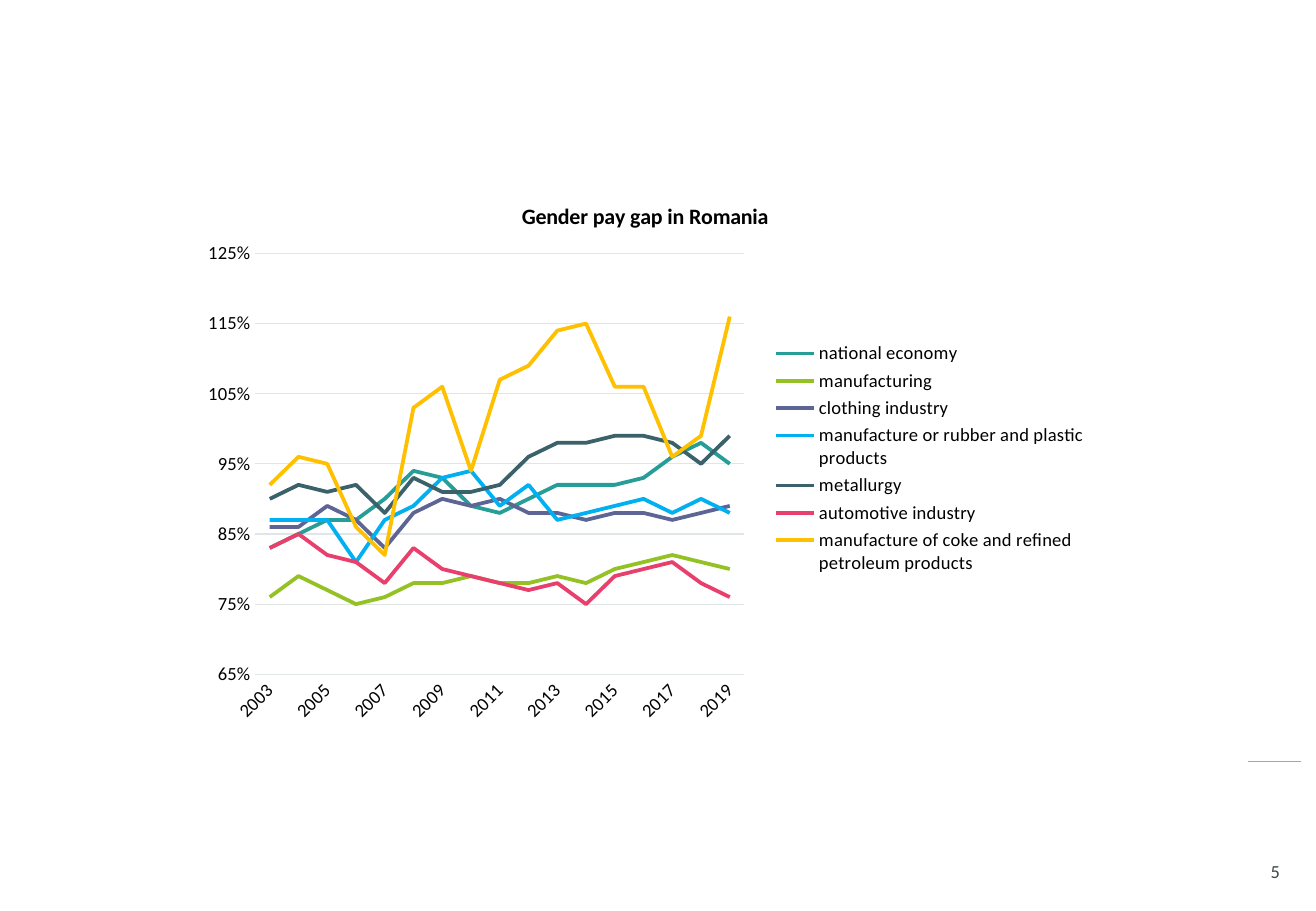
from pptx import Presentation
from pptx.chart.data import CategoryChartData
from pptx.dml.color import RGBColor
from pptx.enum.chart import XL_CHART_TYPE, XL_LEGEND_POSITION, XL_TICK_MARK
from pptx.enum.shapes import MSO_CONNECTOR
from pptx.enum.text import MSO_ANCHOR, PP_ALIGN
from pptx.oxml.ns import qn
from pptx.util import Inches, Pt
from lxml.etree import SubElement

# Content
TITLE = "Gender pay gap in Romania"
PAGE_NUMBER = "5"
FONT = "Calibri"
COLORS = {"text": "000000", "grid": "E0E5E5", "rule": "A6A6A6", "number": "3C4646"}
YEARS = [str(year) for year in range(2003, 2020)]
# Name, colour, women's pay as a percentage of men's for each year
SERIES = [
    ("national economy", "279D98",
     [83, 85, 87, 87, 90, 94, 93, 89, 88, 90, 92, 92, 92, 93, 96, 98, 95]),
    ("manufacturing", "94C225",
     [76, 79, 77, 75, 76, 78, 78, 79, 78, 78, 79, 78, 80, 81, 82, 81, 80]),
    ("clothing industry", "5D6595",
     [86, 86, 89, 87, 83, 88, 90, 89, 90, 88, 88, 87, 88, 88, 87, 88, 89]),
    ("manufacture or rubber and plastic products", "00B0F0",
     [87, 87, 87, 81, 87, 89, 93, 94, 89, 92, 87, 88, 89, 90, 88, 90, 88]),
    ("metallurgy", "3B616B",
     [90, 92, 91, 92, 88, 93, 91, 91, 92, 96, 98, 98, 99, 99, 98, 95, 99]),
    ("automotive industry", "E93F6D",
     [83, 85, 82, 81, 78, 83, 80, 79, 78, 77, 78, 75, 79, 80, 81, 78, 76]),
    ("manufacture of coke and refined petroleum products", "FFC000",
     [92, 96, 95, 86, 82, 103, 106, 94, 107, 109, 114, 115, 106, 106, 96, 99, 116]),
]


def set_font(font, size, color, bold=False):
    font.name, font.size, font.bold = FONT, Pt(size), bold
    font.color.rgb = RGBColor.from_string(color)


def set_line(line, color, width):
    line.color.rgb = RGBColor.from_string(color)
    line.width = Pt(width)


def place(element, index, inner=False, **fractions):
    """Give a chart part a manual position, in fractions of the chart."""
    for old in element.findall(qn("c:layout")):
        element.remove(old)
    layout = SubElement(element, qn("c:layout"))
    element.insert(index, layout)
    manual = SubElement(layout, qn("c:manualLayout"))
    if inner:
        SubElement(manual, qn("c:layoutTarget")).set("val", "inner")
    for side in "xy":
        SubElement(manual, qn(f"c:{side}Mode")).set("val", "edge")
    for side, value in fractions.items():
        SubElement(manual, qn(f"c:{side}")).set("val", str(value))


deck = Presentation()
deck.slide_width, deck.slide_height = Inches(10.83), Inches(7.5)
page = deck.slides.add_slide(deck.slide_layouts[6])

# Page number and the rule above it
box = page.shapes.add_textbox(Inches(10.25), Inches(6.97), Inches(0.49), Inches(0.41))
frame = box.text_frame
frame.word_wrap = True
frame.vertical_anchor = MSO_ANCHOR.MIDDLE
frame.text = PAGE_NUMBER
frame.paragraphs[0].alignment = PP_ALIGN.CENTER
set_font(frame.paragraphs[0].font, 10.9, COLORS["number"])

rule = page.shapes.add_connector(
    MSO_CONNECTOR.STRAIGHT, Inches(10.27), Inches(6.27), Inches(10.71), Inches(6.27))
set_line(rule.line, COLORS["rule"], 1)
SubElement(rule._element.spPr, qn("a:effectLst"))

# Chart
data = CategoryChartData(number_format="0%")
data.categories = YEARS
for name, _, percents in SERIES:
    data.add_series(name, [percent / 100 for percent in percents])
chart = page.shapes.add_chart(
    XL_CHART_TYPE.LINE, Inches(1.58), Inches(1.44), Inches(7.45), Inches(4.62), data).chart
set_font(chart.font, 11, COLORS["text"])
plot = chart.plots[0]
plot.vary_by_categories = False
for series, (_, color, _) in zip(plot.series, SERIES):
    series.smooth = False
    set_line(series.format.line, color, 2.25)

# Title and legend
chart.has_title = True
heading = chart.chart_title.text_frame
heading.text = TITLE
set_font(heading.paragraphs[0].font, 13, COLORS["text"], bold=True)
chart.has_legend = True
legend = chart.legend
legend.position = XL_LEGEND_POSITION.RIGHT
legend.include_in_layout = False
set_font(legend.font, 11, COLORS["text"])

# Axes
years, values = chart.category_axis, chart.value_axis
for axis in (years, values):
    axis.major_tick_mark = axis.minor_tick_mark = XL_TICK_MARK.NONE
    set_font(axis.tick_labels.font, 11, COLORS["text"])
set_line(years.format.line, COLORS["grid"], 0.75)
years._element.txPr.bodyPr.set("rot", "-2700000")
skip = years._element.makeelement(qn("c:tickLblSkip"), {"val": "2"})
years._element.find(qn("c:noMultiLvlLbl")).addprevious(skip)
values.minimum_scale, values.maximum_scale, values.major_unit = 0.65, 1.25, 0.1
values.tick_labels.number_format = "0%"
values.tick_labels.number_format_is_linked = False
values.format.line.fill.background()
set_line(values.major_gridlines.format.line, COLORS["grid"], 0.75)

# Positions within the chart
place(chart._chartSpace.chart.plotArea, 0, inner=True, x=0.07, y=0.14, w=0.54, h=0.75)
place(chart.chart_title._element, 1, x=0.36, y=0.04)
place(legend._element, 1, x=0.64, y=0.29, w=0.35, h=0.43)

deck.save("out.pptx")
